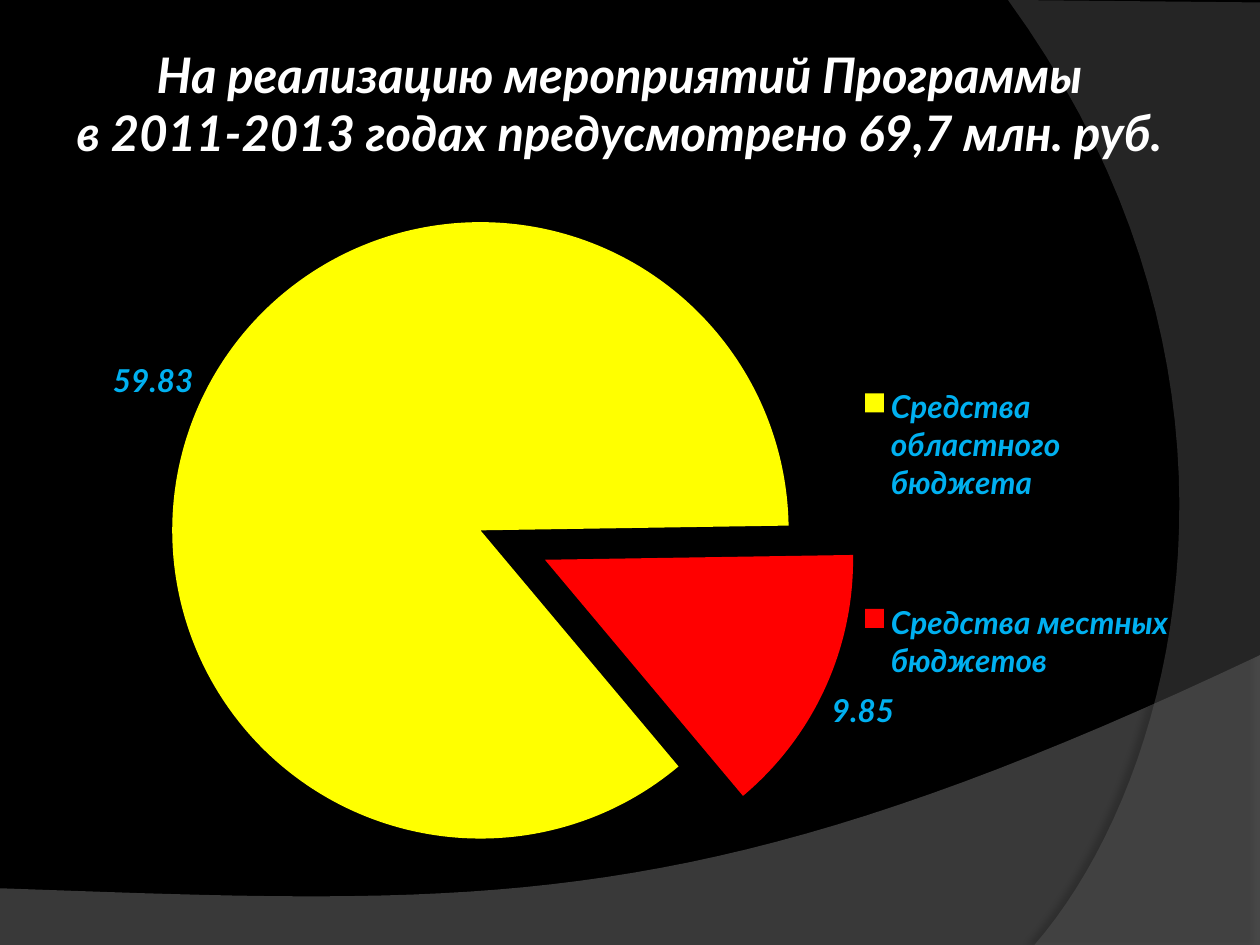
from lxml import etree
from pptx import Presentation
from pptx.chart.data import CategoryChartData
from pptx.dml.color import RGBColor
from pptx.enum.chart import XL_CHART_TYPE, XL_LABEL_POSITION, XL_LEGEND_POSITION
from pptx.enum.text import MSO_ANCHOR, PP_ALIGN
from pptx.oxml import parse_xml
from pptx.oxml.ns import nsdecls, qn
from pptx.util import Inches, Pt

CURVE_STEPS = 40


def format_font(font, size, name, color):
    font.color.rgb = RGBColor.from_string(color)
    values = {"size": Pt(size), "name": name, "bold": True, "italic": True}
    for attribute, value in values.items():
        setattr(font, attribute, value)


def manual_layout(x, y, width, height, inner=False):
    """Return a chart layout element; lengths are fractions of the chart."""
    target = '<c:layoutTarget val="inner"/>' if inner else ""
    return parse_xml(
        f'<c:layout {nsdecls("c")}><c:manualLayout>{target}'
        '<c:xMode val="edge"/><c:yMode val="edge"/>'
        f'<c:x val="{x}"/><c:y val="{y}"/><c:w val="{width}"/><c:h val="{height}"/>'
        "</c:manualLayout></c:layout>"
    )


presentation = Presentation()
presentation.slide_width = Inches(10)
presentation.slide_height = Inches(7.5)
slide = presentation.slides.add_slide(presentation.slide_layouts[5])
slide.background.fill.solid()
slide.background.fill.fore_color.rgb = RGBColor.from_string("000000")

# Background waves: straight corners, then one Bezier curve from the last corner
waves = [
    {
        "corners": [(0, 7.05), (0, 7.5), (10, 7.5), (10, 5.2)],
        "curve": [(5.59, 7.29), (3.91, 7.19), (0, 7.05)],
        "color": "7F7F7F", "alpha": 45,
        "shadow_alpha": 35, "distance": 3.5, "direction": 270,
    },
    {
        "corners": [(10, 0.02), (10, 7.5), (8.21, 7.5)],
        "curve": [(9.35, 6.19), (10.18, 3), (8, 0)],
        "color": "5E5E5E", "alpha": 40,
        "shadow_alpha": 45, "distance": 4, "direction": 180,
    },
]
for wave in waves:
    points = list(wave["corners"])
    controls = [points[-1], *wave["curve"]]
    for step in range(1, CURVE_STEPS + 1):
        t = step / CURVE_STEPS
        weights = [(1 - t) ** 3, 3 * t * (1 - t) ** 2, 3 * t**2 * (1 - t), t**3]
        points.append(tuple(
            sum(weight * control[axis] for weight, control in zip(weights, controls))
            for axis in (0, 1)
        ))
    points = [(Inches(x), Inches(y)) for x, y in points]
    builder = slide.shapes.build_freeform(*points[0])
    builder.add_line_segments(points[1:], close=True)
    shape = builder.convert_to_shape()
    shape.line.fill.background()
    shape.fill.solid()
    shape.fill.fore_color.rgb = RGBColor.from_string(wave["color"])
    properties = shape._element.spPr
    fill_color = properties.find(qn("a:solidFill")).find(qn("a:srgbClr"))
    etree.SubElement(fill_color, qn("a:alpha"), val=str(wave["alpha"] * 1000))
    properties.append(parse_xml(
        f'<a:effectLst {nsdecls("a")}><a:outerShdw blurRad="{Pt(4)}" '
        f'dist="{Pt(wave["distance"])}" dir="{wave["direction"] * 60000}" '
        'algn="ctr" rotWithShape="0"><a:srgbClr val="000000">'
        f'<a:alpha val="{wave["shadow_alpha"] * 1000}"/></a:srgbClr>'
        "</a:outerShdw></a:effectLst>"
    ))

# Title, moved in front of the waves
title = slide.shapes.title
slide.shapes._spTree.append(title._element)
title.left, title.top = Inches(0.5), Inches(0.3)
title.width, title.height = Inches(8.83), Inches(1.25)
frame = title.text_frame
frame.word_wrap = True
frame.vertical_anchor = MSO_ANCHOR.TOP
for side in ("left", "top", "right", "bottom"):
    setattr(frame, f"margin_{side}", Inches(0.05))
frame.text = (
    "На реализацию мероприятий Программы\v"
    "в 2011-2013 годах предусмотрено 69,7 млн. руб."
)
paragraph = frame.paragraphs[0]
paragraph.alignment = PP_ALIGN.CENTER
for run in paragraph.runs:
    format_font(run.font, 28, "Lato", "FFFFFF")

# Budget pie
budget = CategoryChartData()
budget.categories = ["Средства областного бюджета", "Средства местных бюджетов"]
budget.add_series("Series 1", (59.83, 9.85))
chart = slide.shapes.add_chart(
    XL_CHART_TYPE.PIE, Inches(0), Inches(0.96), Inches(10.28), Inches(6.54), budget
).chart
chart.has_title = False
format_font(chart.font, 18, "Arial", "FFFFFF")

plot_area = chart._chartSpace.chart.plotArea
for layout in plot_area.findall(qn("c:layout")):
    plot_area.remove(layout)
plot_area.insert(0, manual_layout(0.133, 0.112, 0.476, 0.77, inner=True))

plot = chart.plots[0]
plot.vary_by_categories = True
pie = plot._element
for angle in pie.findall(qn("c:firstSliceAng")):
    pie.remove(angle)
etree.SubElement(pie, qn("c:firstSliceAng"), val="140")

series = plot.series[0]
for index, color in enumerate(("FFFF00", "FF0000")):
    point_format = series.points[index].format
    point_format.fill.solid()
    point_format.fill.fore_color.rgb = RGBColor.from_string(color)
    point_format.line.fill.background()
local_slice = series._element.findall(qn("c:dPt"))[1]
explosion = etree.Element(qn("c:explosion"), val="23")
local_slice.find(qn("c:spPr")).addprevious(explosion)

labels = series.data_labels
labels.show_value = True
labels.position = XL_LABEL_POSITION.OUTSIDE_END
format_font(labels.font, 18, "Lato", "00B0F0")

chart.has_legend = True
legend = chart.legend
legend.position = XL_LEGEND_POSITION.RIGHT
legend.include_in_layout = False
format_font(legend.font, 18, "Lato", "00B0F0")
for layout in legend._element.findall(qn("c:layout")):
    legend._element.remove(layout)
legend._element.find(qn("c:legendPos")).addnext(manual_layout(0.66, 0.2, 0.25, 0.6))

presentation.save("out.pptx")
